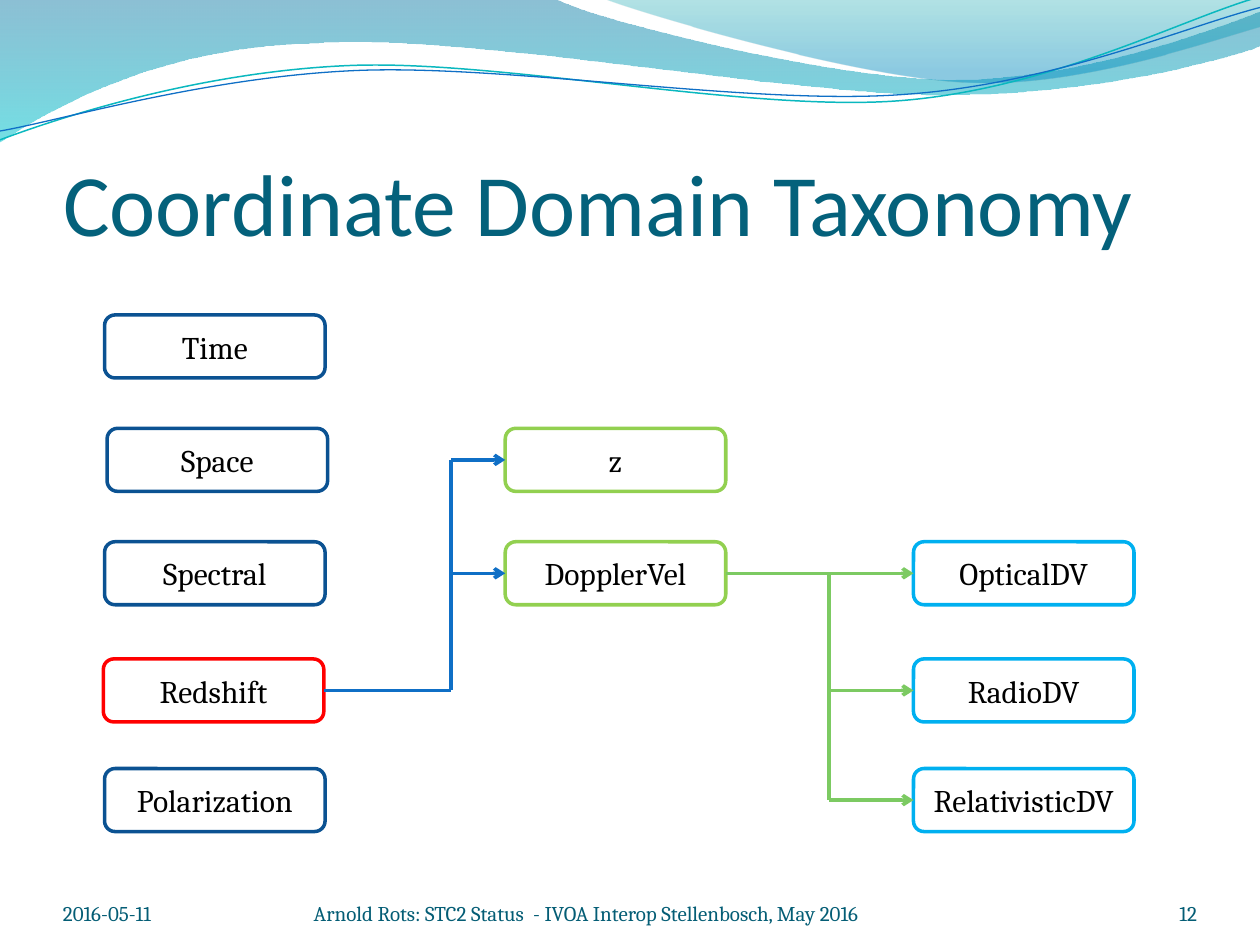
import math
import pptx
import pptx.util
import pptx.dml.color
import pptx.enum.shapes
import pptx.enum.text
import pptx.oxml
import pptx.oxml.ns
import lxml.etree

Inches, Pt = pptx.util.Inches, pptx.util.Pt
ALIGN, ANCHOR = pptx.enum.text.PP_ALIGN, pptx.enum.text.MSO_ANCHOR
qn = pptx.oxml.ns.qn

COLORS = {
    "title": "04617B", "footer": "045D75", "label": "000000",
    "domain": "0B5292", "selected": "FF0000", "redshift": "92D050", "doppler": "00B0F0",
    "blue_link": "0F6FC6", "green_link": "7CCA62", "teal_line": "0AB8BF",
    "wave_top": "0074A1", "wave_bottom": "00C6CF",
    "crest_top": "00A1A9", "crest_bottom": "008BBF",
}
BOX_SIZE = (1.75, 0.5)
ROWS = (2.5, 3.4, 4.3, 5.23, 6.1)
TILT = -2.7

LONG_WAVE = [
    (0, 0), (4.4, -0.01),
    (4.76, 0.17, 6.64, 0.63, 7.58, 0.63), (8.53, 0.63, 9.58, 0.26, 10, 0.09),
    (10.01, 0.36),
    (9.83, 0.44, 8.7, 0.76, 7.46, 0.75), (6.22, 0.75, 3.82, 0.28, 2.57, 0.34),
    (1.29, 0.36, 0.46, 0.83, -0.01, 1.13), (0, 0),
]
CREST = [
    (4.79, -0.01),
    (5.09, 0.11, 6.82, 0.62, 7.69, 0.65), (8.56, 0.69, 9.61, 0.32, 10, 0.21),
    (10, 0), (4.79, -0.01),
]
TEAL_LINE = [
    (0, 1.11), (0.48, 0.93, 1.58, 0.57, 2.77, 0.52),
    (3.95, 0.47, 5.93, 0.89, 7.13, 0.8), (8.33, 0.71, 9.38, 0.15, 9.98, -0.02),
]
BLUE_LINE = [
    (0, 1.04), (0.47, 0.96, 1.64, 0.61, 2.83, 0.56),
    (4.03, 0.51, 5.97, 0.84, 7.17, 0.75), (8.36, 0.67, 9.41, 0.21, 10, 0.06),
]


def rgb(name):
    return pptx.dml.color.RGBColor.from_string(COLORS[name])


def write(frame, text, size, font, color, align):
    paragraph = frame.paragraphs[0]
    paragraph.alignment = align
    run = paragraph.add_run()
    run.text = text
    run.font.size = Pt(size)
    run.font.name = font
    run.font.color.rgb = rgb(color)


def set_insets(frame, top=0):
    frame.margin_left = frame.margin_right = frame.margin_bottom = 0
    frame.margin_top = Inches(top)


def level_out(segments, center):
    cos, sin = math.cos(math.radians(-TILT)), math.sin(math.radians(-TILT))
    leveled = []
    for segment in segments:
        offsets = [(x - center[0], y - center[1])
                   for x, y in zip(segment[::2], segment[1::2])]
        leveled.append(tuple(
            value for dx, dy in offsets
            for value in (center[0] + dx * cos - dy * sin, center[1] + dx * sin + dy * cos)))
    return leveled


def add_curve(slide, segments, close):
    points = [(Inches(x), Inches(y)) for segment in segments
              for x, y in zip(segment[::2], segment[1::2])]
    builder = slide.shapes.build_freeform(*points[0])
    builder.add_line_segments(points[1:], close=close)
    curve = builder.convert_to_shape()
    curve.shadow.inherit = False
    steps = iter(list(curve._element.spPr.iter(qn("a:lnTo"))))
    for segment in segments[1:]:
        step = next(steps)
        if len(segment) == 6:
            step.addprevious(bend := lxml.etree.Element(qn("a:cubicBezTo")))
            bend.append(step[0])
            step.getparent().remove(step)
            for _ in range(2):
                control = next(steps)
                bend.append(control[0])
                control.getparent().remove(control)
    return curve


def add_wave(slide, segments, stops):
    wave = add_curve(slide, segments, True)
    wave.line.fill.background()
    wave.fill.gradient()
    wave.fill.gradient_angle = 270
    for stop, (position, color, _) in zip(wave.fill.gradient_stops, stops):
        stop.position = position
        stop.color.rgb = rgb(color)
    for tint, (_, _, opacity) in zip(wave._element.spPr.iter(qn("a:srgbClr")), stops):
        lxml.etree.SubElement(tint, qn("a:alpha")).set("val", str(opacity * 1000))


def add_wave_line(slide, segments, center, color, width):
    wave_line = add_curve(slide, level_out(segments, center), False)
    wave_line.rotation = TILT
    wave_line.fill.background()
    wave_line.line.color.rgb = rgb(color)
    wave_line.line.width = Pt(width)


def add_banner(slide):
    add_wave(slide, LONG_WAVE, [(0, "wave_top", 45), (1, "wave_bottom", 55)])
    add_wave(slide, CREST, [(0, "crest_top", 30), (0.8, "crest_bottom", 45)])
    add_wave_line(slide, TEAL_LINE, (4.99, 0.58), "teal_line", 0.85)
    add_wave_line(slide, BLUE_LINE, (5, 0.59), "blue_link", 0.75)


def add_title(slide, left, top, width, height):
    title = slide.shapes.title
    title.left, title.top = Inches(left), Inches(top)
    title.width, title.height = Inches(width), Inches(height)
    frame = title.text_frame
    set_insets(frame, 0.05)
    frame.vertical_anchor = ANCHOR.BOTTOM
    write(frame, "Coordinate Domain Taxonomy", 50, "Calibri", "title", ALIGN.LEFT)


def add_node(slide, text, left, row, color):
    node = slide.shapes.add_shape(
        pptx.enum.shapes.MSO_SHAPE.ROUNDED_RECTANGLE,
        Inches(left), Inches(ROWS[row]), *map(Inches, BOX_SIZE))
    node.shadow.inherit = False
    node.fill.background()
    node.line.color.rgb = rgb(color)
    node.line.width = Pt(2)
    set_insets(node.text_frame)
    node.text_frame.vertical_anchor = ANCHOR.MIDDLE
    write(node.text_frame, text, 18, "Cambria", "label", ALIGN.CENTER)
    return node


def add_link(slide, start, end, color, source=None, target=None):
    link = slide.shapes.add_connector(
        pptx.enum.shapes.MSO_CONNECTOR.STRAIGHT, *start, *end)
    if source is not None:
        link.begin_connect(source, 3)
    if target is not None:
        link.end_connect(target, 1)
    link.line.color.rgb = rgb(color)
    link.line.width = Pt(2)
    if target is not None:
        line = link.line._get_or_add_ln()
        lxml.etree.SubElement(line, qn("a:tailEnd")).set("type", "arrow")
    lxml.etree.SubElement(link._element.spPr, qn("a:effectLst"))


def middle(node):
    return node.top + node.height // 2


def add_branches(slide, source, targets, trunk, color):
    trunk = Inches(trunk)
    level = middle(source)
    source_end = (source.left + source.width, level)
    heights = [middle(target) for target in targets]
    if level not in heights:
        add_link(slide, source_end, (trunk, level), color, source=source)
    farthest = max(heights, key=lambda height: abs(height - level))
    add_link(slide, (trunk, level), (trunk, farthest), color)
    for target, height in zip(targets, heights):
        direct = height == level
        start = source_end if direct else (trunk, height)
        add_link(slide, start, (target.left, height), color,
                 source=source if direct else None, target=target)


def add_taxonomy(slide):
    domains = [add_node(slide, name, left, row, color) for row, (name, left, color) in enumerate((
        ("Time", 0.83, "domain"), ("Space", 0.85, "domain"), ("Spectral", 0.83, "domain"),
        ("Redshift", 0.82, "selected"), ("Polarization", 0.83, "domain")))]
    redshifts = [add_node(slide, name, 4.01, row, "redshift")
                 for row, name in enumerate(("z", "DopplerVel"), 1)]
    velocities = [add_node(slide, name, 7.25, row, "doppler")
                  for row, name in enumerate(("OpticalDV", "RadioDV", "RelativisticDV"), 2)]
    add_branches(slide, domains[3], redshifts, 3.58, "blue_link")
    add_branches(slide, redshifts[1], velocities, 6.58, "green_link")


def add_footer(slide, top, height):
    for text, left, width, align in (
            ("2016-05-11", 0.5, 1.83, ALIGN.LEFT),
            ("Arnold Rots: STC2 Status  - IVOA Interop Stellenbosch, May 2016",
             2.49, 4.76, ALIGN.LEFT),
            ("12", 8.67, 0.83, ALIGN.RIGHT)):
        note = slide.shapes.add_textbox(*map(Inches, (left, top, width, height))).text_frame
        note.word_wrap = True
        set_insets(note)
        note.vertical_anchor = ANCHOR.BOTTOM
        write(note, text, 12, "Cambria", "footer", align)


def main():
    deck = pptx.Presentation()
    deck.slide_width, deck.slide_height = Inches(10), Inches(7.5)
    slide = deck.slides.add_slide(deck.slide_layouts[5])
    add_banner(slide)
    add_title(slide, 0.5, 0.77, 9.08, 1.25)
    add_taxonomy(slide)
    add_footer(slide, 6.95, 0.4)
    deck.save("out.pptx")


if __name__ == "__main__":
    main()
